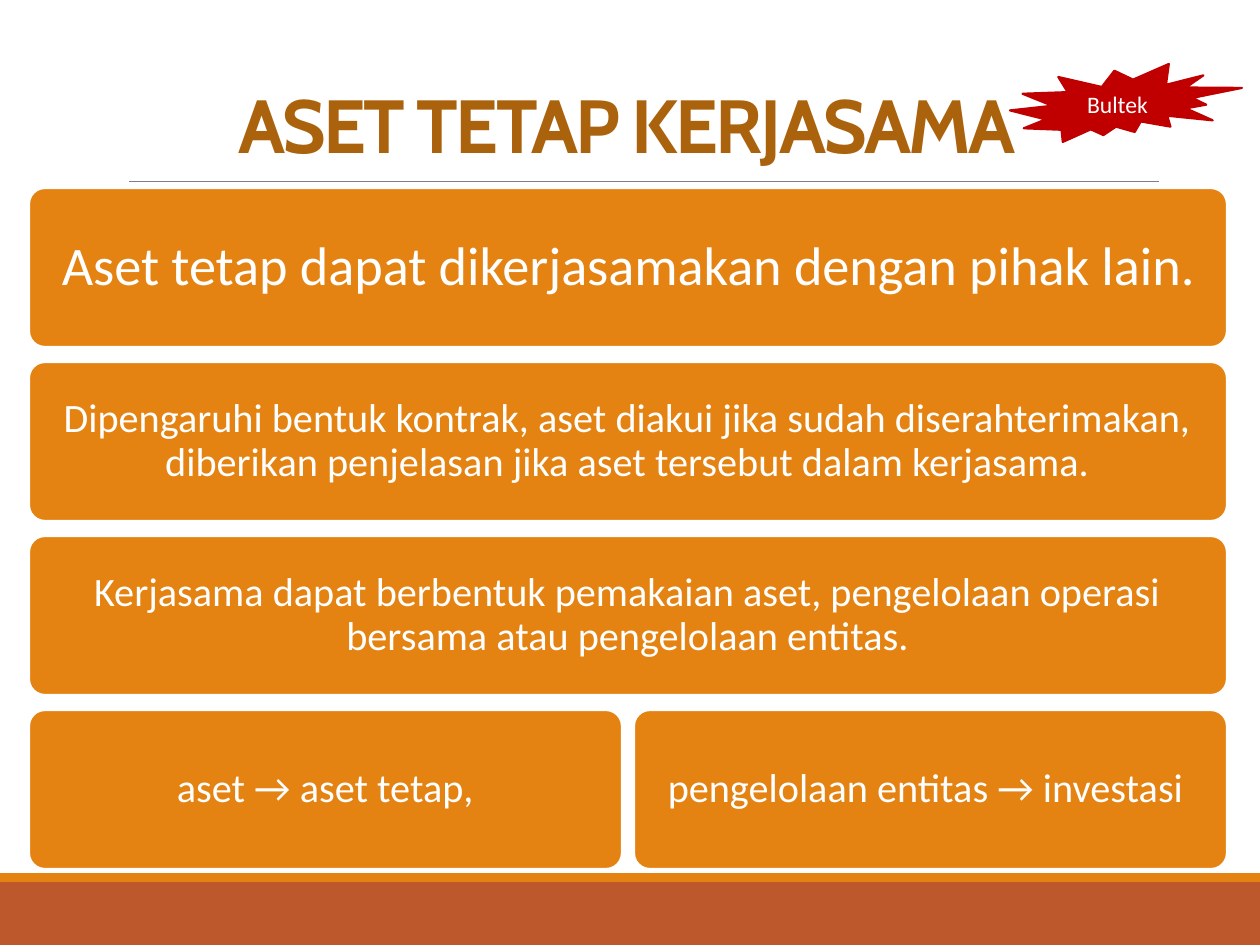
from lxml.etree import SubElement
from pptx import Presentation
from pptx.dml.color import RGBColor
from pptx.enum.shapes import MSO_CONNECTOR, MSO_SHAPE
from pptx.enum.text import MSO_ANCHOR, PP_ALIGN
from pptx.oxml.ns import qn
from pptx.util import Pt

PX = 914400 / 126
ORANGE, RUST, BROWN = "E48312", "BD582C", "AB620D"
RED, GRAY, WHITE = "C00000", "808080", "FFFFFF"


def px(n):
    return round(n * PX)


def rgb(color):
    return RGBColor.from_string(color)


class Deck:
    font = "Calibri"

    def __init__(self, width, height):
        self.prs = Presentation()
        self.prs.slide_width, self.prs.slide_height = px(width), px(height)
        self.slide = self.prs.slides.add_slide(self.prs.slide_layouts[6])

    def shape(self, kind, x, y, w, h, fill, line=None):
        sp = self.slide.shapes.add_shape(kind, px(x), px(y), px(w), px(h))
        sp.shadow.inherit = False
        sp.fill.solid()
        sp.fill.fore_color.rgb = rgb(fill)
        if line:
            sp.line.color.rgb = rgb(line)
            sp.line.width = Pt(1.25)
        else:
            sp.line.fill.background()
        return sp

    def add_text(self, sp, text, size, color=WHITE, anchor=MSO_ANCHOR.MIDDLE, spacing=1.0):
        tf = sp.text_frame
        tf.word_wrap = True
        tf.vertical_anchor = anchor
        p = tf.paragraphs[0]
        p.alignment = PP_ALIGN.CENTER
        p.line_spacing = spacing
        r = p.add_run()
        r.text = text
        r.font.name = self.font
        r.font.size = Pt(size)
        r.font.color.rgb = rgb(color)
        return r

    def title(self, text, x, y, w, h):
        sp = self.slide.shapes.add_textbox(px(x), px(y), px(w), px(h))
        r = self.add_text(sp, text, 43, BROWN, MSO_ANCHOR.BOTTOM, 0.85)
        r.font.name = "Cabin"
        r.font.bold = True
        r.font._element.set("spc", "-150")

    def rule(self, x1, x2, y):
        cxn = self.slide.shapes.add_connector(
            MSO_CONNECTOR.STRAIGHT, px(x1), px(y), px(x2), px(y))
        cxn.line.color.rgb = rgb(GRAY)
        cxn.line.width = Pt(0.5)
        SubElement(cxn._element.spPr, qn("a:effectLst"))

    def card(self, text, x, y, w, h, size, inset):
        sp = self.shape(MSO_SHAPE.ROUNDED_RECTANGLE, x, y, w, h, ORANGE, WHITE)
        sp.adjustments[0] = 0.1
        self.add_text(sp, text, size, spacing=0.9)
        tf = sp.text_frame
        tf.margin_left = tf.margin_right = tf.margin_top = tf.margin_bottom = px(inset)

    def burst(self, text, x, y, w, h):
        sp = self.shape(MSO_SHAPE.EXPLOSION2, x, y, w, h, RED, RED)
        self.add_text(sp, text, 13.5)


def main():
    deck = Deck(1260, 945)
    deck.shape(MSO_SHAPE.RECTANGLE, 0, 882, 1260, 63, RUST)
    deck.shape(MSO_SHAPE.RECTANGLE, 0, 873, 1260, 9, ORANGE)
    deck.rule(129, 1159, 181)
    deck.title("ASET TETAP KERJASAMA", 28, 11, 1198, 164)

    left, top, width, height, pitch, gap = 29, 188, 1198, 159, 174, 12
    rows = [
        (31, 16, ["Aset tetap dapat dikerjasamakan dengan pihak lain."]),
        (23, 12, ["Dipengaruhi bentuk kontrak, aset diakui jika sudah diserahterimakan, "
                  "diberikan penjelasan jika aset tersebut dalam kerjasama."]),
        (23, 12, ["Kerjasama dapat berbentuk pemakaian aset, pengelolaan operasi "
                  "bersama atau pengelolaan entitas."]),
        (23, 12, ["aset → aset tetap,", "pengelolaan entitas → investasi "]),
    ]
    for i, (size, inset, texts) in enumerate(rows):
        w = (width - gap * (len(texts) - 1)) // len(texts)
        for j, text in enumerate(texts):
            deck.card(text, left + j * (w + gap), top + i * pitch, w, height, size, inset)

    deck.burst("Bultek", 1010, 64, 232, 78)
    deck.prs.save("out.pptx")


if __name__ == "__main__":
    main()
